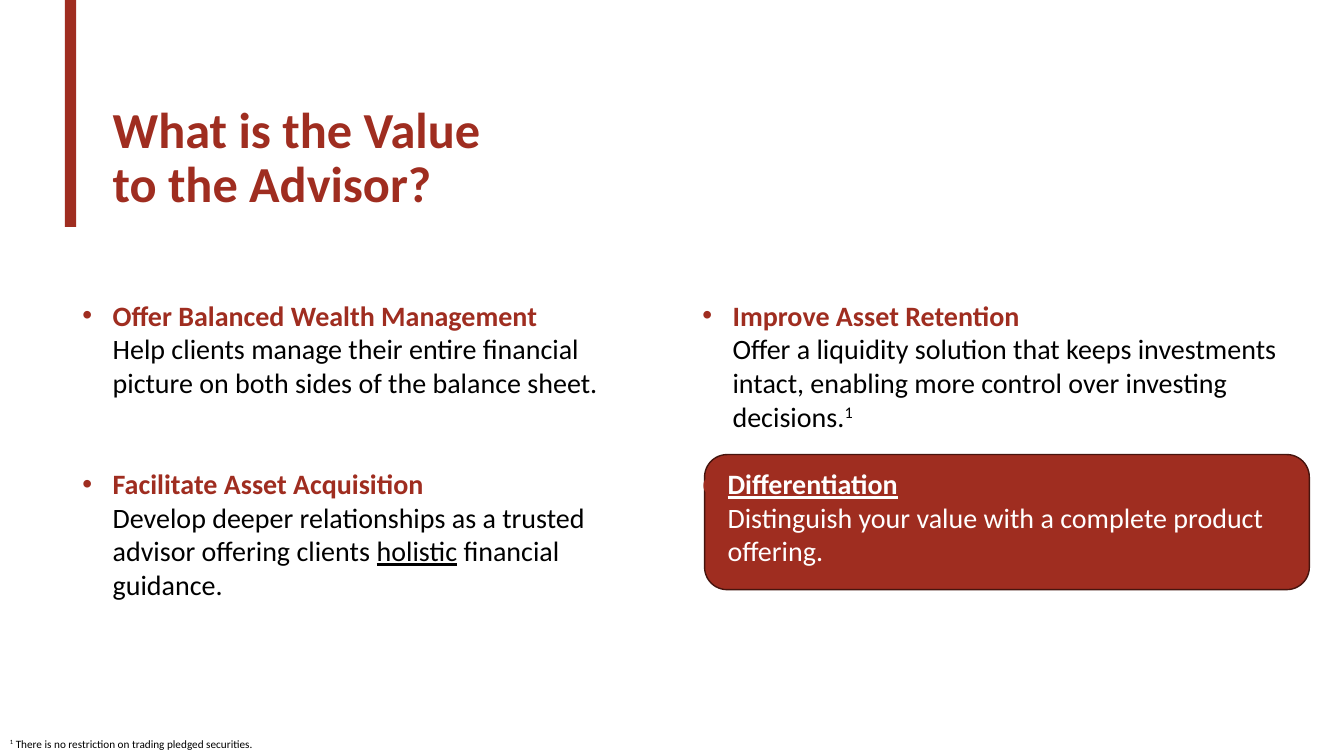
from lxml.etree import SubElement
from pptx import Presentation
from pptx.dml.color import RGBColor
from pptx.enum.shapes import MSO_SHAPE
from pptx.enum.text import MSO_ANCHOR
from pptx.oxml.ns import qn
from pptx.util import Pt

# Content: runs are (text, style), and a style letter is
# h heading, u underlined, s superscript; "\n" ends a line
TITLE = [("What is the Value to the Advisor?", "h")]
POINTS = [
    [("Offer Balanced Wealth Management\n", "h"),
     ("Help clients manage their entire financial picture on both sides "
      "of the balance sheet.", "")],
    [("Improve Asset Retention\n", "h"),
     ("Offer a liquidity solution that keeps investments intact, enabling "
      "more control over investing decisions.", ""), ("1", "s")],
    [("Facilitate Asset Acquisition\n", "h"),
     ("Develop deeper relationships as a trusted advisor offering clients ", ""),
     ("holistic", "u"), (" financial guidance.", "")],
    [("Differentiation\n", "hu"),
     ("Distinguish your value with a complete product offering.", "")],
]
NOTE = [("1", "s"), (" There is no restriction on trading pledged securities.", "")]
COLORS = {"red": "9F2D20", "dark": "46140E", "black": "000000", "white": "FFFFFF"}
FONT = "Calibri"

# Grid of points: (left, width) per column, top per row
COLS = [(51.8, 415.4), (494.6, 440.6)]
ROWS = [209.5, 329.8]
HEIGHT = 115

deck = Presentation()
deck.slide_width, deck.slide_height = Pt(960), Pt(540)
slide = deck.slides.add_slide(deck.slide_layouts[6])


def color(name):
    return RGBColor.from_string(COLORS[name])


def add_text(runs, box, size=20, head="red", body="black", bullet=None,
             indent=0, spacing=None, anchor=MSO_ANCHOR.TOP):
    frame = slide.shapes.add_textbox(*map(Pt, box)).text_frame
    frame.word_wrap = True
    frame.vertical_anchor = anchor
    para = frame.paragraphs[0]
    if spacing:
        para.line_spacing = spacing
    if bullet:
        props = para._p.get_or_add_pPr()
        props.set("marL", str(Pt(indent)))
        props.set("indent", str(-Pt(indent)))
        tint = SubElement(props, qn("a:buClr"))
        SubElement(tint, qn("a:srgbClr"), val=COLORS["red"])
        SubElement(props, qn("a:buFont"), typeface="Arial")
        SubElement(props, qn("a:buChar"), char=bullet)
    for text, style in runs:
        run = para.add_run()
        run.text = text.rstrip("\n")
        font = run.font
        font.name, font.size = FONT, Pt(size)
        font.bold = "h" in style
        font.underline = "u" in style
        font.color.rgb = color(head if "h" in style else body)
        if "s" in style:
            run._r.get_or_add_rPr().set("baseline", "30000")
        if text.endswith("\n"):
            para.add_line_break()


def add_block(kind, box, line=None):
    block = slide.shapes.add_shape(kind, *map(Pt, box))
    block.shadow.inherit = False
    block.fill.solid()
    block.fill.fore_color.rgb = color("red")
    if line:
        block.line.color.rgb = color(line)
        block.line.width = Pt(1)
    else:
        block.line.fill.background()


# Highlight panel and accent bar
add_block(MSO_SHAPE.ROUNDED_RECTANGLE, (503.3, 324.7, 432, 96.5), line="dark")
add_block(MSO_SHAPE.RECTANGLE, (46.4, 0, 8, 162))

# Title
add_text(TITLE, (73.4, 70.6, 288.7, 86.4), size=36, spacing=0.9,
         anchor=MSO_ANCHOR.MIDDLE)

# Points, row by row; the last one sits on the panel
for i, runs in enumerate(POINTS):
    row, col = divmod(i, len(COLS))
    left, width = COLS[col]
    look = {"bullet": "•", "indent": 21.6}
    if i == len(POINTS) - 1:
        look = {"bullet": "o", "indent": 18, "head": "white", "body": "white"}
    add_text(runs, (left, ROWS[row], width, HEIGHT), **look)

# Footnote
add_text(NOTE, (0, 522.7, 226, 17), size=8, anchor=MSO_ANCHOR.MIDDLE)

deck.save("out.pptx")
